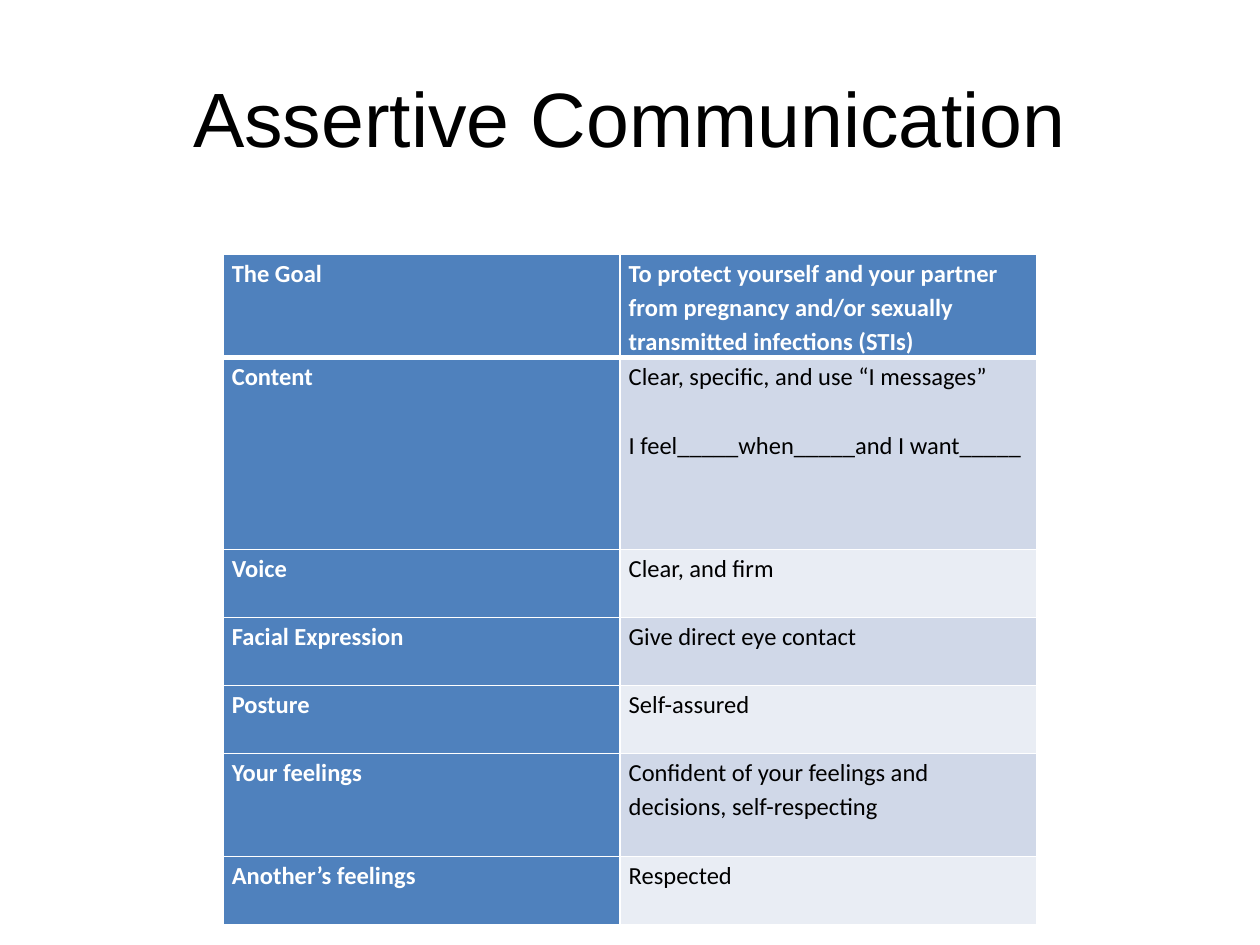
from dataclasses import dataclass
from pptx import Presentation
from pptx.dml.color import RGBColor as Rgb
from pptx.enum.text import MSO_ANCHOR as Anchor, PP_ALIGN as Align
from pptx.oxml.ns import qn
from pptx.util import Inches, Pt
from lxml.etree import SubElement as Sub


@dataclass(frozen=True)
class Theme:
    """Colours, fonts and type sizes of the slide."""
    ink: str = "000000"
    paper: str = "FFFFFF"
    head: str = "4F81BD"
    bands: tuple = ("E9EDF4", "D0D8E8")
    title: tuple = ("Arial", 44)
    body: tuple = ("Calibri", 14)


THEME = Theme()
COLS = (3.15, 3.31)
ROWS = [
    (0.82, "The Goal", ["To protect yourself and your partner from pregnancy "
                        "and/or sexually transmitted infections (STIs)"]),
    (1.52, "Content", ["Clear, specific, and use “I messages”",
                       "I feel_____when_____and I want_____"]),
    (0.54, "Voice", ["Clear, and firm"]),
    (0.54, "Facial Expression", ["Give direct eye contact"]),
    (0.54, "Posture", ["Self-assured"]),
    (0.82, "Your feelings", ["Confident of your feelings and decisions, self-respecting"]),
    (0.54, "Another’s feelings", ["Respected"]),
]


def apply(item, values):
    """Set each named attribute of an item."""
    for name, value in values.items():
        setattr(item, name, value)


def write(par, text, face, color, bold=False):
    """Add one formatted run to a paragraph."""
    run = par.add_run()
    run.text = text
    name, size = face
    apply(run.font, {"name": name, "size": Pt(size), "bold": bold})
    run.font.color.rgb = Rgb.from_string(color)


def edge(cell, widths):
    """Draw the cell's borders, given widths in points by side."""
    props = cell._tc.get_or_add_tcPr()
    for spot, (side, width) in enumerate(widths.items()):
        line = Sub(props, qn(f"a:ln{side}"), w=str(Pt(width)))
        fill = Sub(line, qn("a:solidFill"))
        Sub(fill, qn("a:srgbClr"), val=THEME.paper)
        props.insert(spot, line)


def fill_cell(cell, texts, fill, color, bold, widths):
    """Format one table cell and write its paragraphs."""
    side = Inches(0.07)
    apply(cell, {"margin_left": side, "margin_right": side, "margin_top": 0,
                 "margin_bottom": 0, "vertical_anchor": Anchor.TOP})
    cell.fill.solid()
    cell.fill.fore_color.rgb = Rgb.from_string(fill)
    edge(cell, widths)
    frame = cell.text_frame
    for spot, text in enumerate(texts):
        par = frame.add_paragraph() if spot else frame.paragraphs[0]
        apply(par, {"line_spacing": 1.15, "space_before": Pt(20 if spot else 0)})
        write(par, text, THEME.body, color, bold)


def add_title(slide, box, text):
    """Place the centred title in its box."""
    frame = slide.shapes.add_textbox(*map(Inches, box)).text_frame
    apply(frame, {"word_wrap": True, "vertical_anchor": Anchor.MIDDLE})
    par = frame.paragraphs[0]
    par.alignment = Align.CENTER
    write(par, text, THEME.title, THEME.ink)


def add_grid(slide, left, top):
    """Place the table of traits with its top left corner as given."""
    high = sum(row[0] for row in ROWS)
    box = (left, top, sum(COLS), high)
    table = slide.shapes.add_table(len(ROWS), len(COLS), *map(Inches, box)).table
    apply(table, {"first_row": False, "horz_banding": False})
    for col, width in zip(table.columns, COLS):
        col.width = Inches(width)
    for num, (height, label, texts) in enumerate(ROWS):
        table.rows[num].height = Inches(height)
        widths = {"L": 1, "R": 1, "T": 3 if num == 1 else 1, "B": 1 if num else 3}
        for col, words in enumerate(([label], texts)):
            strong = col == 0 or num == 0
            fill = THEME.head if strong else THEME.bands[num % 2]
            color = THEME.paper if strong else THEME.ink
            fill_cell(table.cell(num, col), words, fill, color, strong, widths)


def main():
    """Build the slide and save it."""
    deck = Presentation()
    apply(deck, {"slide_width": Inches(10), "slide_height": Inches(7.5)})
    slide = deck.slides.add_slide(deck.slide_layouts[6])
    add_title(slide, (0.5, 0.3, 9, 1.25), "Assertive Communication")
    add_grid(slide, 1.77, 2.02)
    deck.save("out.pptx")


if __name__ == "__main__":
    main()
